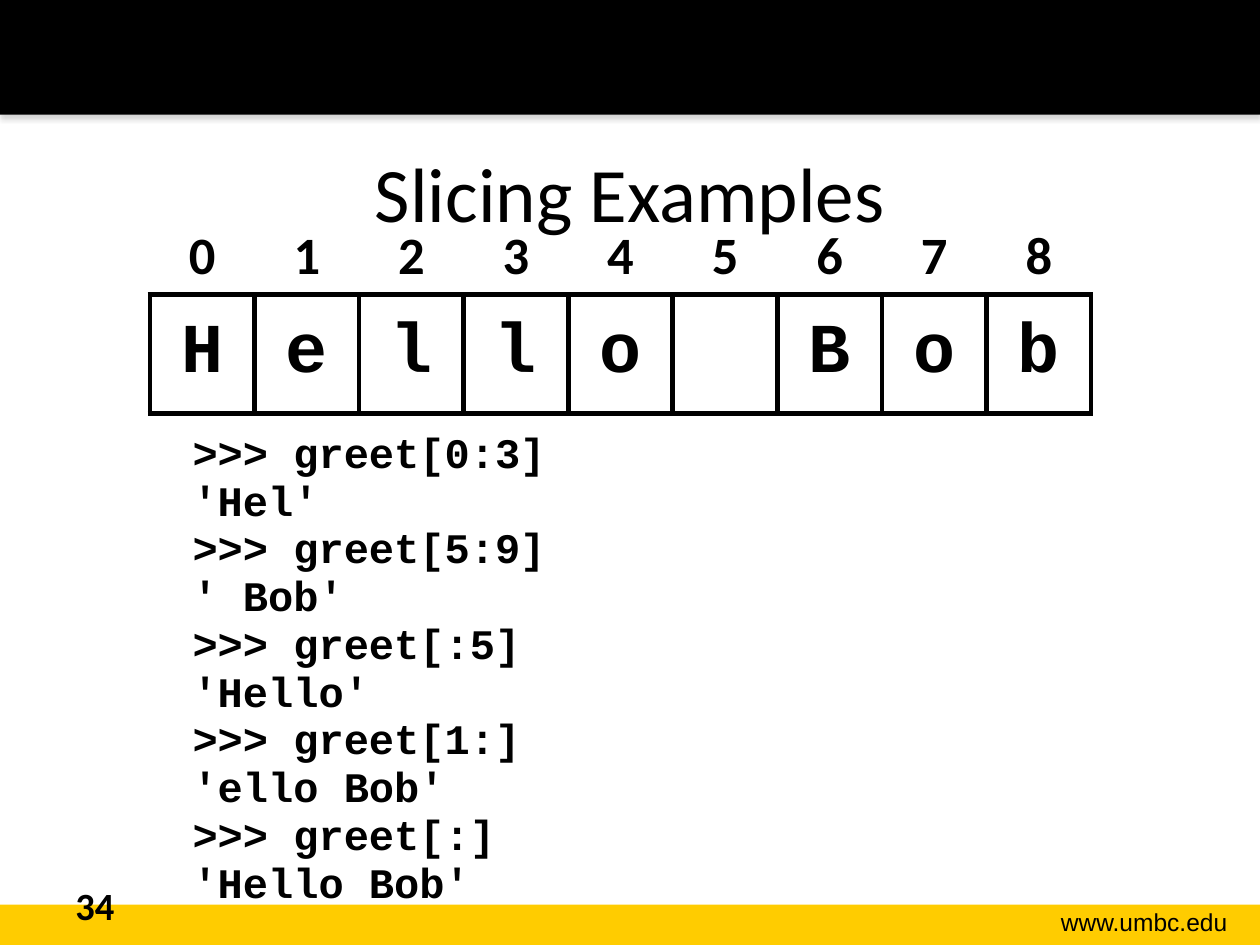
from dataclasses import dataclass

from lxml.etree import SubElement
from pptx import Presentation
from pptx.dml.color import RGBColor
from pptx.enum.shapes import MSO_SHAPE as Shape
from pptx.enum.text import MSO_ANCHOR as Anchor, MSO_AUTO_SIZE as AutoSize, PP_ALIGN as Align
from pptx.oxml.ns import qn
from pptx.util import Inches, Pt

WIDTH, HEIGHT = 10, 7.5
COLORS = {"black": "000000", "gold": "FFCC00", "white": "FFFFFF"}
PLAIN_TABLE = "{2D5ABB26-0587-4C30-8999-92F81FD0307C}"
GREETING = "Hello Bob"
SLICES = [
    ("0:3", "Hel"),
    ("5:9", " Bob"),
    (":5", "Hello"),
    ("1:", "ello Bob"),
    (":", "Hello Bob"),
]


@dataclass
class Box:
    left: float
    top: float
    width: float
    height: float

    def emu(self) -> list:
        return [Inches(v) for v in (self.left, self.top, self.width, self.height)]


@dataclass
class Row:
    texts: list
    height: float
    size: int
    font: str
    anchor: Anchor
    edges: str
    fill: str = ""


def color(name: str) -> RGBColor:
    return RGBColor.from_string(COLORS[name])


def write(frame, text: str, *, size: float, font: str = "Calibri", bold: bool = False,
          align=Align.LEFT, anchor=Anchor.TOP, hanging: tuple = (),
          line_spacing: float = 1.0, gap: float = 0) -> None:
    """Fill a text frame, one paragraph for each line of text."""
    frame.word_wrap = True
    frame.vertical_anchor = anchor
    for number, line in enumerate(text.split("\n")):
        paragraph = frame.add_paragraph() if number else frame.paragraphs[0]
        paragraph.alignment = align
        paragraph.line_spacing = line_spacing
        if hanging:
            properties = paragraph._p.get_or_add_pPr()
            for key, value in zip(("marL", "indent"), hanging):
                properties.set(key, str(Inches(value)))
        if number and gap:
            paragraph.space_before = Pt(gap)
        run = paragraph.add_run()
        run.text = line
        run.font.size, run.font.name, run.font.bold = Pt(size), font, bold
        run.font.color.rgb = color("black")


def add_text(slide, box: Box, text: str, **look):
    area = slide.shapes.add_textbox(*box.emu())
    write(area.text_frame, text, **look)
    return area


def add_band(slide, box: Box, fill: str):
    band = slide.shapes.add_shape(Shape.RECTANGLE, *box.emu())
    band.shadow.inherit = False
    band.fill.solid()
    band.fill.fore_color.rgb = color(fill)
    band.line.fill.background()
    return band


def add_drop_shadow(band) -> None:
    effects = band._element.spPr.find(qn("a:effectLst"))
    shadow = SubElement(effects, qn("a:outerShdw"), blurRad=str(Pt(3.1)),
                        dist=str(Pt(1.8)), dir="5400000", rotWithShape="0")
    tint = SubElement(shadow, qn("a:srgbClr"), val="808080")
    SubElement(tint, qn("a:alpha"), val="35000")


def set_edges(cell, edges: str) -> None:
    properties = cell._tc.get_or_add_tcPr()
    for edge in edges:
        line = SubElement(properties, qn(f"a:ln{edge}"), w=str(Pt(3)))
        fill = SubElement(line, qn("a:solidFill"))
        SubElement(fill, qn("a:srgbClr"), val=COLORS["black"])


def add_index_table(slide, left: float, top: float, column: float, rows: list) -> None:
    count = len(rows[0].texts)
    box = Box(left, top, column * count, sum(row.height for row in rows))
    table = slide.shapes.add_table(len(rows), count, *box.emu()).table
    table.first_row = table.horz_banding = False
    table._tbl.tblPr.find(qn("a:tableStyleId")).text = PLAIN_TABLE
    for table_column in table.columns:
        table_column.width = Inches(column)
    for r, row in enumerate(rows):
        table.rows[r].height = Inches(row.height)
        for c, text in enumerate(row.texts):
            cell = table.cell(r, c)
            cell.vertical_anchor = row.anchor
            set_edges(cell, row.edges)
            if row.fill:
                cell.fill.solid()
                cell.fill.fore_color.rgb = color(row.fill)
            else:
                cell.fill.background()
            if text.strip():
                write_cell(cell, text, row)


def write_cell(cell, text: str, row: Row) -> None:
    write(cell.text_frame, text, size=row.size, font=row.font, bold=True,
          align=Align.CENTER, anchor=row.anchor)


def main() -> None:
    deck = Presentation()
    deck.slide_width, deck.slide_height = Inches(WIDTH), Inches(HEIGHT)
    slide = deck.slides.add_slide(deck.slide_layouts[5])
    heading = slide.shapes.title

    # Footer and header bands
    footer_height = 0.32
    add_band(slide, Box(0, HEIGHT - footer_height, WIDTH, footer_height), "gold")
    add_drop_shadow(add_band(slide, Box(0, 0, WIDTH, 0.91), "black"))
    website = add_text(slide, Box(7.85, 7.15, 1.99, 0.34), "www.umbc.edu",
                       size=14, font="Arial", align=Align.RIGHT)
    website.text_frame.auto_size = AutoSize.SHAPE_TO_FIT_TEXT

    # Title, in front of the bands
    slide.shapes._spTree.append(heading._element)
    heading.left, heading.top, heading.width, heading.height = Box(0.5, 0.9, 9, 1.25).emu()
    write(heading.text_frame, "Slicing Examples", size=44,
          align=Align.CENTER, anchor=Anchor.MIDDLE)

    # Page number
    add_text(slide, Box(0.5, 6.95, 2.33, 0.4), "34", size=22, bold=True)

    # Letters of the greeting under their indexes
    indexes = [str(i) for i in range(len(GREETING))]
    add_index_table(slide, 1.19, 1.68, 0.83, [
        Row(indexes, 0.66, 30, "Calibri", Anchor.BOTTOM, "B"),
        Row(list(GREETING), 0.94, 40, "Courier New", Anchor.MIDDLE, "LRTB", "white"),
    ])

    # Interpreter session
    session = "\n".join(f">>> greet[{part}]\n'{result}'" for part, result in SLICES)
    add_text(slide, Box(0.81, 3.38, 8.5, 3.04), session, size=24, font="Courier New",
             bold=True, hanging=(1, -0.38), line_spacing=0.9, gap=1.4)

    deck.save("out.pptx")


if __name__ == "__main__":
    main()
